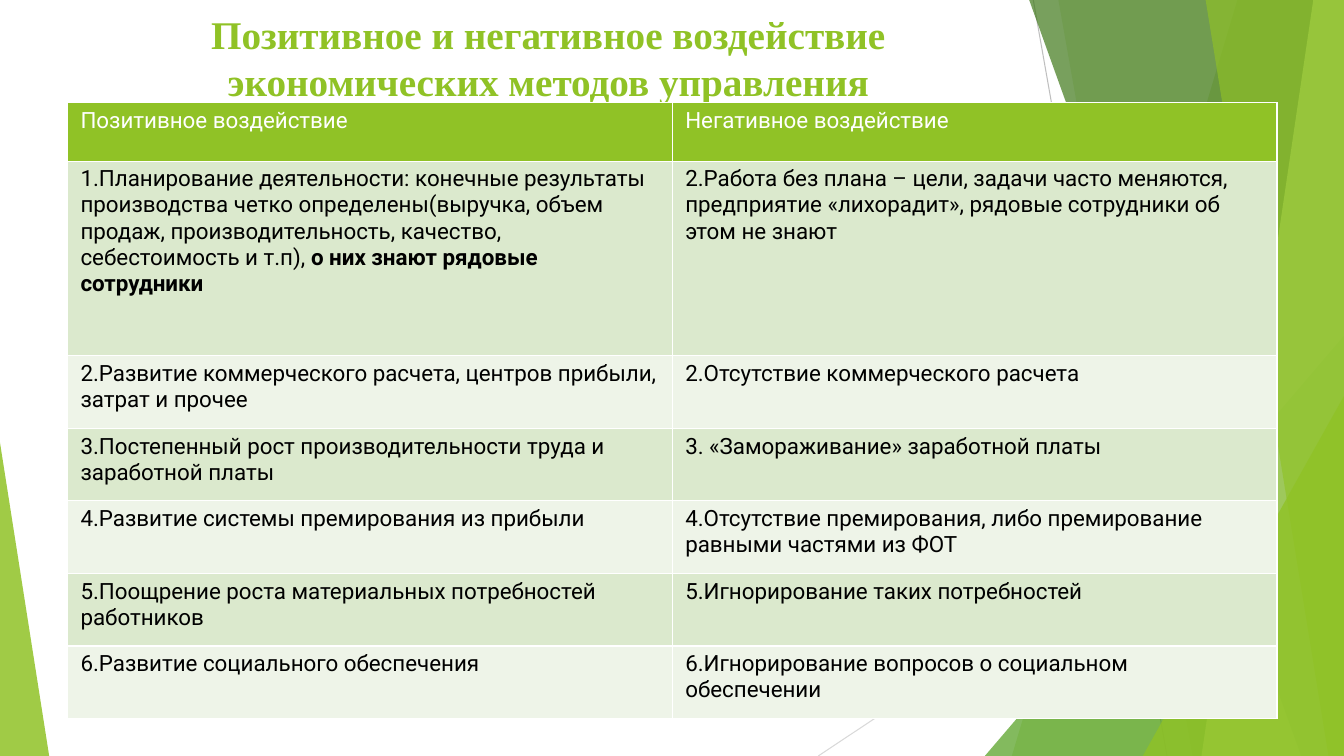
from lxml.etree import SubElement
from pptx import Presentation
from pptx.dml.color import RGBColor
from pptx.enum.shapes import MSO_CONNECTOR, MSO_SHAPE
from pptx.enum.text import MSO_ANCHOR, PP_ALIGN
from pptx.oxml.ns import qn
from pptx.util import Cm, Pt

WIDE, HIGH = 33.87, 19.05
GREEN = RGBColor(0x90, 0xC2, 0x26)
LEAF = RGBColor(0x54, 0xA0, 0x21)
MOSS = RGBColor(0x3F, 0x78, 0x19)
LIME = RGBColor(0xC0, 0xE4, 0x74)
MINT = RGBColor(0xDB, 0xE9, 0xCD)
PALE = RGBColor(0xEE, 0xF4, 0xE8)
GREY = RGBColor(0xBF, 0xBF, 0xBF)
MIST = RGBColor(0xD9, 0xD9, 0xD9)
WHITE = RGBColor(0xFF, 0xFF, 0xFF)
BLACK = RGBColor(0, 0, 0)

TITLE = "Позитивное и негативное воздействие экономических методов управления"
ROWS = [
    ("Позитивное воздействие", "Негативное воздействие"),
    ("1.Планирование деятельности: конечные результаты производства четко "
     "определены(выручка, объем продаж, производительность, качество, "
     "себестоимость и т.п), |о них знают рядовые сотрудники",
     "2.Работа без плана – цели, задачи часто меняются, предприятие "
     "«лихорадит», рядовые сотрудники об этом не знают"),
    ("2.Развитие коммерческого расчета, центров прибыли, затрат и прочее",
     "2.Отсутствие коммерческого расчета"),
    ("3.Постепенный рост производительности труда и заработной платы",
     "3. «Замораживание» заработной платы"),
    ("4.Развитие системы премирования из прибыли",
     "4.Отсутствие премирования, либо премирование равными частями из ФОТ"),
    ("5.Поощрение роста материальных потребностей работников",
     "5.Игнорирование таких потребностей"),
    ("6.Развитие социального обеспечения",
     "6.Игнорирование вопросов о социальном обеспечении"),
]
TALL = [1.47, 4.9] + [1.83] * 5


class Page:
    """Draws the elements of one slide in a shared style."""

    head_font, body_font = "Times New Roman", "Roboto"
    head_size, body_size = Pt(28), Pt(16)

    def __init__(self, slide):
        self.slide = slide
        self.shapes = slide.shapes

    def line(self, start, end, color):
        ends = [Cm(n) for n in (*start, *end)]
        line = self.shapes.add_connector(MSO_CONNECTOR.STRAIGHT, *ends)
        line.line.color.rgb = color
        line.line.width = Pt(0.75)
        SubElement(line._element.spPr, qn("a:effectLst"))

    def paint(self, shape, color, alpha):
        shape.shadow.inherit = False
        shape.line.fill.background()
        shape.fill.solid()
        shape.fill.fore_color.rgb = color
        tint = shape._element.spPr.find(qn("a:solidFill"))[0]
        SubElement(tint, qn("a:alpha"), val=str(alpha * 1000))

    def wedge(self, top, base, color, alpha):
        form = self.shapes.build_freeform(Cm(top), Cm(-0.02))
        edge = [(WIDE, -0.02), (WIDE, HIGH), (base, HIGH)]
        form.add_line_segments([(Cm(x), Cm(y)) for x, y in edge], close=True)
        self.paint(form.convert_to_shape(), color, alpha)

    def peak(self, left, top, width, apex, color, alpha):
        shape = self.shapes.add_shape(
            MSO_SHAPE.ISOSCELES_TRIANGLE,
            Cm(left), Cm(top), Cm(width), Cm(HIGH - top))
        shape.adjustments[0] = apex
        self.paint(shape, color, alpha)

    def title(self, text, left, top, width, height):
        box = self.shapes.add_textbox(Cm(left), Cm(top), Cm(width), Cm(height))
        frame = box.text_frame
        frame.word_wrap = True
        frame.vertical_anchor = MSO_ANCHOR.TOP
        frame.margin_top = Cm(0.25)
        para = frame.paragraphs[0]
        para.text = text
        para.alignment = PP_ALIGN.CENTER
        font = para.font
        font.name, font.size, font.bold = self.head_font, self.head_size, True
        font.color.rgb = GREEN

    def cell(self, cell, text, fill, color):
        cell.fill.solid()
        cell.fill.fore_color.rgb = fill
        cell.margin_left = cell.margin_right = Cm(0.33)
        cell.margin_top = cell.margin_bottom = Cm(0.13)
        para = cell.text_frame.paragraphs[0]
        font = para.font
        font.name, font.size = self.body_font, self.body_size
        font.color.rgb = color
        parts = text.split("|")
        if len(parts) == 1:
            font.bold = False
        for place, part in enumerate(parts):
            run = para.add_run()
            run.text = part
            run.font.bold = place > 0

    def table(self, rows, tall, left, top, width):
        count = len(rows[0])
        frame = self.shapes.add_table(
            len(rows), count, Cm(left), Cm(top), Cm(width), Cm(sum(tall)))
        table = frame.table
        for col in table.columns:
            col.width = Cm(width / count)
        for i, (row, size) in enumerate(zip(rows, tall)):
            table.rows[i].height = Cm(size)
            fill = (MINT if i % 2 else PALE) if i else GREEN
            for j, text in enumerate(row):
                self.cell(table.cell(i, j), text, fill, BLACK if i else WHITE)


def main():
    deck = Presentation()
    deck.slide_width, deck.slide_height = Cm(WIDE), Cm(HIGH)
    page = Page(deck.slides.add_slide(deck.slide_layouts[6]))
    page.line((26.04, 0), (29.41, HIGH), GREY)
    page.line((WIDE, 10.24), (20.62, HIGH), MIST)
    page.wedge(31.19, 25.5, GREEN, 30)
    page.wedge(26.67, 30.05, GREEN, 20)
    page.peak(24.82, 8.46, 9.05, 1, LEAF, 72)
    page.wedge(25.93, 32.79, MOSS, 70)
    page.wedge(33.1, 30.28, LIME, 70)
    page.wedge(30.38, 33.48, GREEN, 65)
    page.peak(28.8, 9.98, 5.07, 1, GREEN, 80)
    page.peak(0, 11.15, 1.24, 0, GREEN, 85)
    page.title(TITLE, 1.7, 0, 24.23, 2.39)
    page.table(ROWS, TALL, 1.7, 2.59, 30.48)
    deck.save("out.pptx")


if __name__ == "__main__":
    main()
